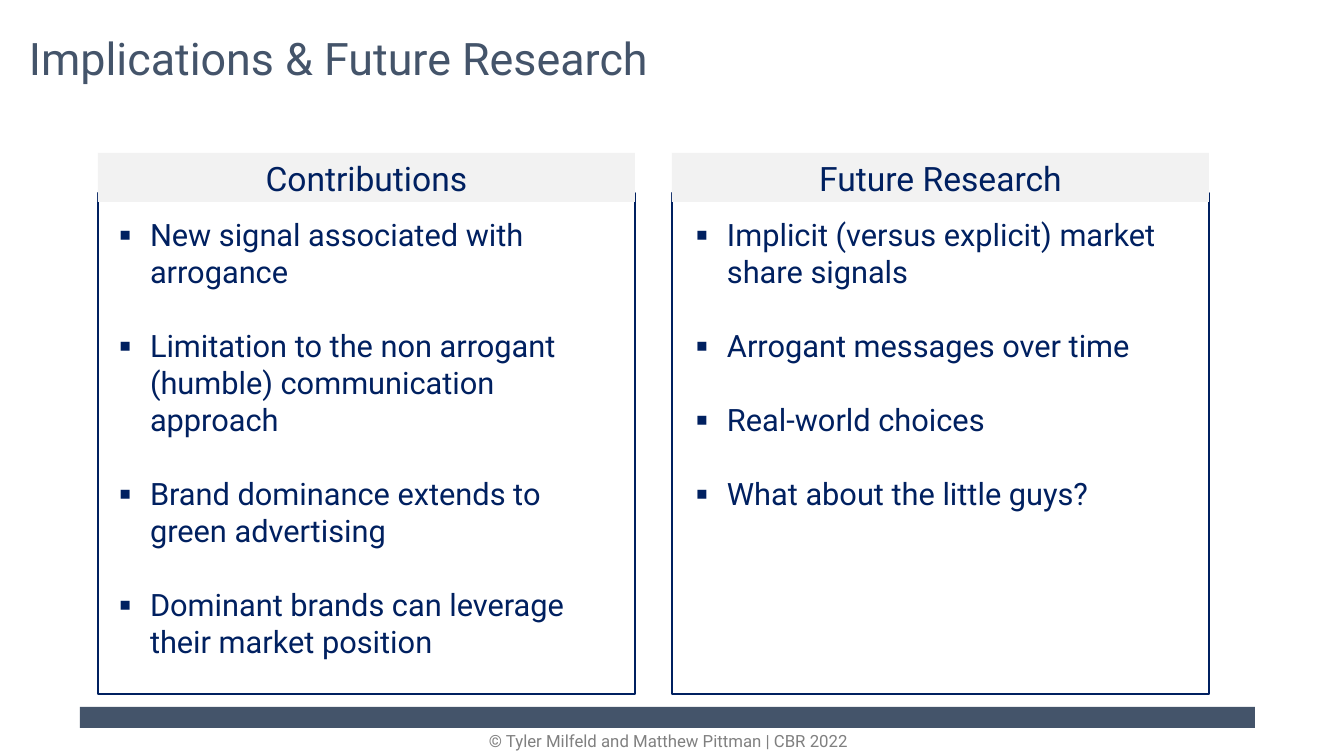
from lxml import etree
from pptx import Presentation
from pptx.dml.color import RGBColor
from pptx.enum.shapes import MSO_SHAPE as Shape
from pptx.enum.text import MSO_ANCHOR as Anchor, PP_ALIGN as Align
from pptx.oxml.ns import qn
from pptx.util import Emu, Pt

FONT = "Roboto"
NAVY, SLATE, PALE, GREY = "002060", "44546A", "F2F2F2", "808080"
INSET = 5
INDENT = 31
HEADER_HEIGHT = 49
FRAME_OFFSET = 40
BODY_OFFSET = 58

PANELS = [
    (98, 16, "Contributions", [
        "New signal associated with arrogance",
        "Limitation to the non arrogant (humble) communication approach",
        "Brand dominance extends to green advertising",
        "Dominant brands can leverage their market position",
    ]),
    (672, 19, "Future Research", [
        "Implicit (versus explicit) market share signals",
        "Arrogant messages over time",
        "Real-world choices",
        "What about the little guys?",
    ]),
]


def px(length):
    return Emu(round(length * 914400 / 100.8))


def color(value):
    return RGBColor.from_string(value)


def add_rect(slide, left, top, width, height, fill=None, line=None):
    shape = slide.shapes.add_shape(
        Shape.RECTANGLE, px(left), px(top), px(width), px(height))
    shape.shadow.inherit = False
    if fill:
        shape.fill.solid()
        shape.fill.fore_color.rgb = color(fill)
    else:
        shape.fill.background()
    if line:
        shape.line.color.rgb = color(line)
        shape.line.width = Pt(1)
    else:
        shape.line.fill.background()
    return shape


def add_bullet(paragraph):
    properties = paragraph._p.get_or_add_pPr()
    properties.set("marL", str(px(INDENT)))
    properties.set("indent", str(-px(INDENT)))
    etree.SubElement(properties, qn("a:buFont")).set("typeface", FONT)
    etree.SubElement(properties, qn("a:buChar")).set("char", "▪")


def write(shape, lines, size, text_color, align=Align.LEFT, bullets=False):
    frame = shape.text_frame
    frame.word_wrap = True
    frame.vertical_anchor = Anchor.TOP
    frame.margin_left = frame.margin_right = px(INSET)
    frame.margin_top = frame.margin_bottom = px(INSET)
    for index, line in enumerate(lines):
        paragraph = frame.add_paragraph() if index else frame.paragraphs[0]
        if bullets:
            add_bullet(paragraph)
        paragraph.alignment = align
        if index:
            paragraph.space_before = Pt(size * 1.2)
        run = paragraph.add_run()
        run.text = line
        run.font.name = FONT
        run.font.size = Pt(size)
        run.font.color.rgb = color(text_color)


def add_text(slide, left, top, width, height, lines, *style, **options):
    box = slide.shapes.add_textbox(px(left), px(top), px(width), px(height))
    write(box, lines, *style, **options)


def add_title(slide, left, top, width, height):
    add_text(slide, left, top, width, height,
             ["Implications & Future Research"], 32, SLATE)


def add_panel(slide, left, top, width, height, body_left, heading, points):
    # Outlined frame, partly covered by its header band
    add_rect(slide, left, top + FRAME_OFFSET, width, height - FRAME_OFFSET,
             line=NAVY)
    header = add_rect(slide, left, top, width, HEADER_HEIGHT, fill=PALE)
    write(header, [heading], 24, NAVY, Align.CENTER)
    # Bulleted points
    add_text(slide, left + body_left, top + BODY_OFFSET, 498,
             height - BODY_OFFSET - 21, points, 22, NAVY, bullets=True)


def add_footer(slide, left, top, width, height):
    bar_height = 21
    add_rect(slide, left, top, width, bar_height, fill=SLATE)
    add_text(slide, left + 8, top + bar_height - 2, width - 14,
             height - bar_height,
             ["© Tyler Milfeld and Matthew Pittman | CBR 2022"],
             12, GREY, Align.CENTER)


def main():
    presentation = Presentation()
    presentation.slide_width = px(1344)
    presentation.slide_height = px(756)
    slide = presentation.slides.add_slide(presentation.slide_layouts[6])
    add_footer(slide, 80, 707, 1175, 50)
    add_title(slide, 24, 26, 1297, 63)
    for left, body_left, heading, points in PANELS:
        add_panel(slide, left, 153, 537, 541, body_left, heading, points)
    presentation.save("out.pptx")


if __name__ == "__main__":
    main()
